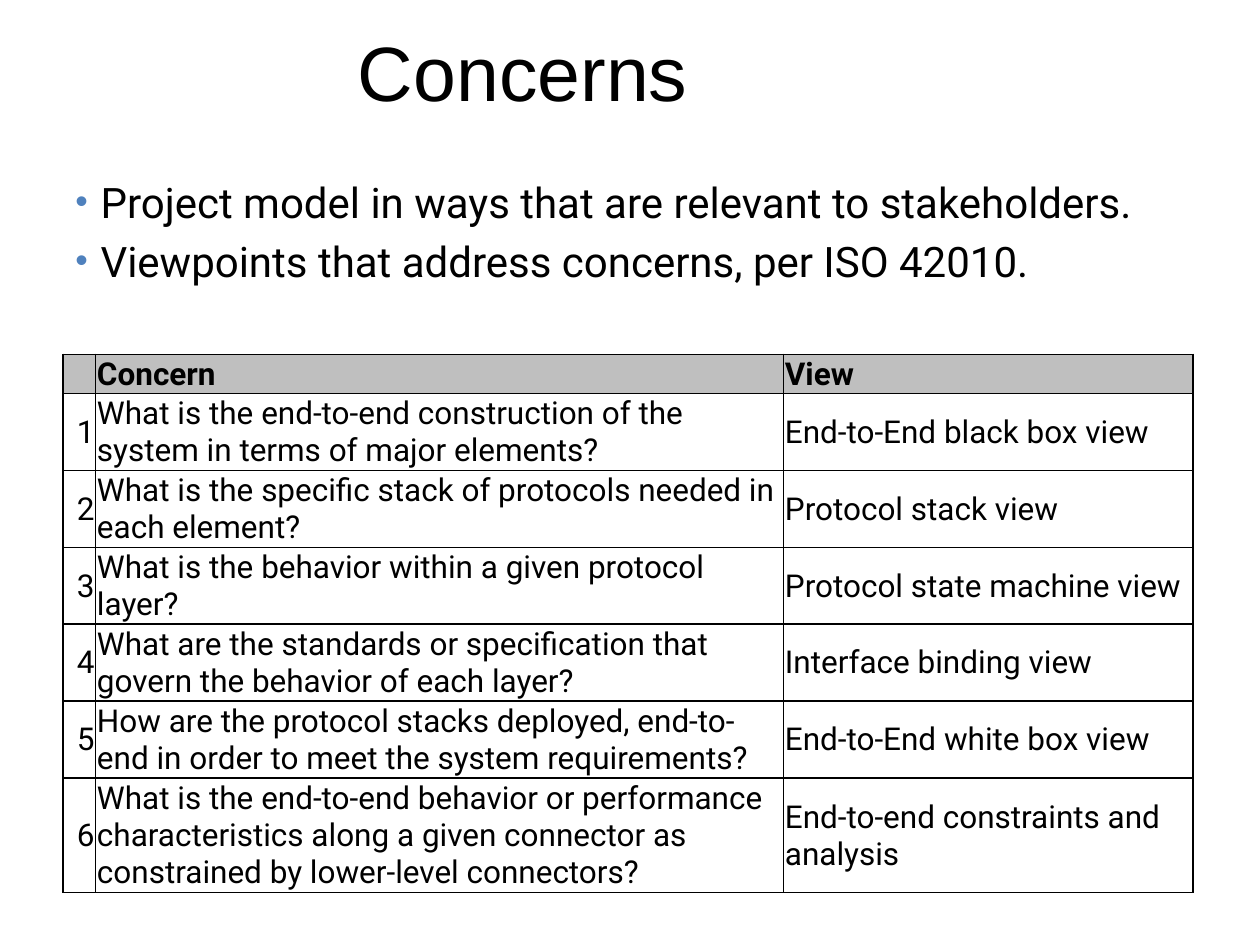
from lxml.etree import SubElement
from pptx import Presentation
from pptx.dml.color import RGBColor
from pptx.enum.text import MSO_ANCHOR, PP_ALIGN
from pptx.oxml.ns import qn
from pptx.util import Inches, Pt

WIDE, HIGH = Inches(10), Inches(7.5)
HUES = {"ink": "000000", "head": "BFBFBF", "dot": "4F81BD"}
POINTS = [
    "Project model in ways that are relevant to stakeholders.",
    "Viewpoints that address concerns, per ISO 42010.",
]
VIEWS = [
    ("What is the end-to-end construction of the system in terms of major elements?",
     "End-to-End black box view"),
    ("What is the specific stack of protocols needed in each element?",
     "Protocol stack view"),
    ("What is the behavior within a given protocol layer?",
     "Protocol state machine view"),
    ("What are the standards or specification that govern the behavior of each layer?",
     "Interface binding view"),
    ("How are the protocol stacks deployed, end-to-end in order to meet the system requirements?",
     "End-to-End white box view"),
    ("What is the end-to-end behavior or performance characteristics along a given "
     "connector as constrained by lower-level connectors?",
     "End-to-end constraints and analysis"),
]
COLS = [0.26, 5.46, 3.25]
ROWS = [0.31] + [0.6] * 5 + [0.89]


def share(x, y, w, h):
    """Turn shares of the slide into a box."""
    return int(x * WIDE), int(y * HIGH), int(w * WIDE), int(h * HIGH)


def style(para, size, face="Roboto", bold=False):
    font = para.font
    font.size, font.name, font.bold = Pt(size), face, bold
    font.color.rgb = RGBColor.from_string(HUES["ink"])


def add_title(slide, box, text):
    frame = slide.shapes.add_textbox(*box).text_frame
    frame.word_wrap = True
    frame.vertical_anchor = MSO_ANCHOR.MIDDLE
    para = frame.paragraphs[0]
    para.text = text
    para.alignment = PP_ALIGN.CENTER
    style(para, 44, "Arial")


def add_dot(para):
    props = para._p.get_or_add_pPr()
    props.set("marL", str(Inches(0.2)))
    props.set("indent", str(-Inches(0.2)))
    hue = SubElement(props, qn("a:buClr"))
    SubElement(hue, qn("a:srgbClr"), val=HUES["dot"])
    SubElement(props, qn("a:buSzPct"), val="85000")
    SubElement(props, qn("a:buFont"), typeface="Arial")
    SubElement(props, qn("a:buChar"), char="•")


def add_points(slide, box, lines):
    frame = slide.shapes.add_textbox(*box).text_frame
    frame.word_wrap = True
    for i, line in enumerate(lines):
        para = frame.add_paragraph() if i else frame.paragraphs[0]
        para.text = line
        if i:
            para.space_before = Pt(5)
        add_dot(para)
        style(para, 24)


def add_edges(cell):
    props = cell._tc.get_or_add_tcPr()
    for i, side in enumerate(("lnL", "lnR", "lnT", "lnB")):
        edge = props.makeelement(qn(f"a:{side}"), {"w": str(Pt(1))})
        fill = SubElement(edge, qn("a:solidFill"))
        SubElement(fill, qn("a:srgbClr"), val=HUES["ink"])
        props.insert(i, edge)


def fill_cell(cell, text, head, right):
    cell.margin_left = cell.margin_right = cell.margin_top = Inches(0.01)
    cell.margin_bottom = 0
    cell.vertical_anchor = MSO_ANCHOR.MIDDLE
    if head:
        cell.fill.solid()
        cell.fill.fore_color.rgb = RGBColor.from_string(HUES["head"])
    else:
        cell.fill.background()
    add_edges(cell)
    para = cell.text_frame.paragraphs[0]
    para.text = text
    para.alignment = PP_ALIGN.RIGHT if right else PP_ALIGN.LEFT
    style(para, 18, bold=head)


def add_views(slide, box, views):
    """Place the table, sharing the box out by COLS and ROWS."""
    data = [("", "Concern", "View")]
    data += [(str(n), *view) for n, view in enumerate(views, 1)]
    table = slide.shapes.add_table(len(ROWS), len(COLS), *box).table
    table.horz_banding = False
    for col, part in zip(table.columns, COLS):
        col.width = int(box[2] * part / sum(COLS))
    for row, part in zip(table.rows, ROWS):
        row.height = int(box[3] * part / sum(ROWS))
    for r, texts in enumerate(data):
        for c, text in enumerate(texts):
            fill_cell(table.cell(r, c), text, head=r == 0, right=c == 0)


def main():
    deck = Presentation()
    deck.slide_width, deck.slide_height = WIDE, HIGH
    slide = deck.slides.add_slide(deck.slide_layouts[6])
    add_title(slide, share(0, 0, 0.83, 0.15), "Concerns")
    add_views(slide, share(0.05, 0.375, 0.897, 0.56), VIEWS)
    add_points(slide, share(0.05, 0.18, 0.9, 0.19), POINTS)
    deck.save("out.pptx")


if __name__ == "__main__":
    main()
